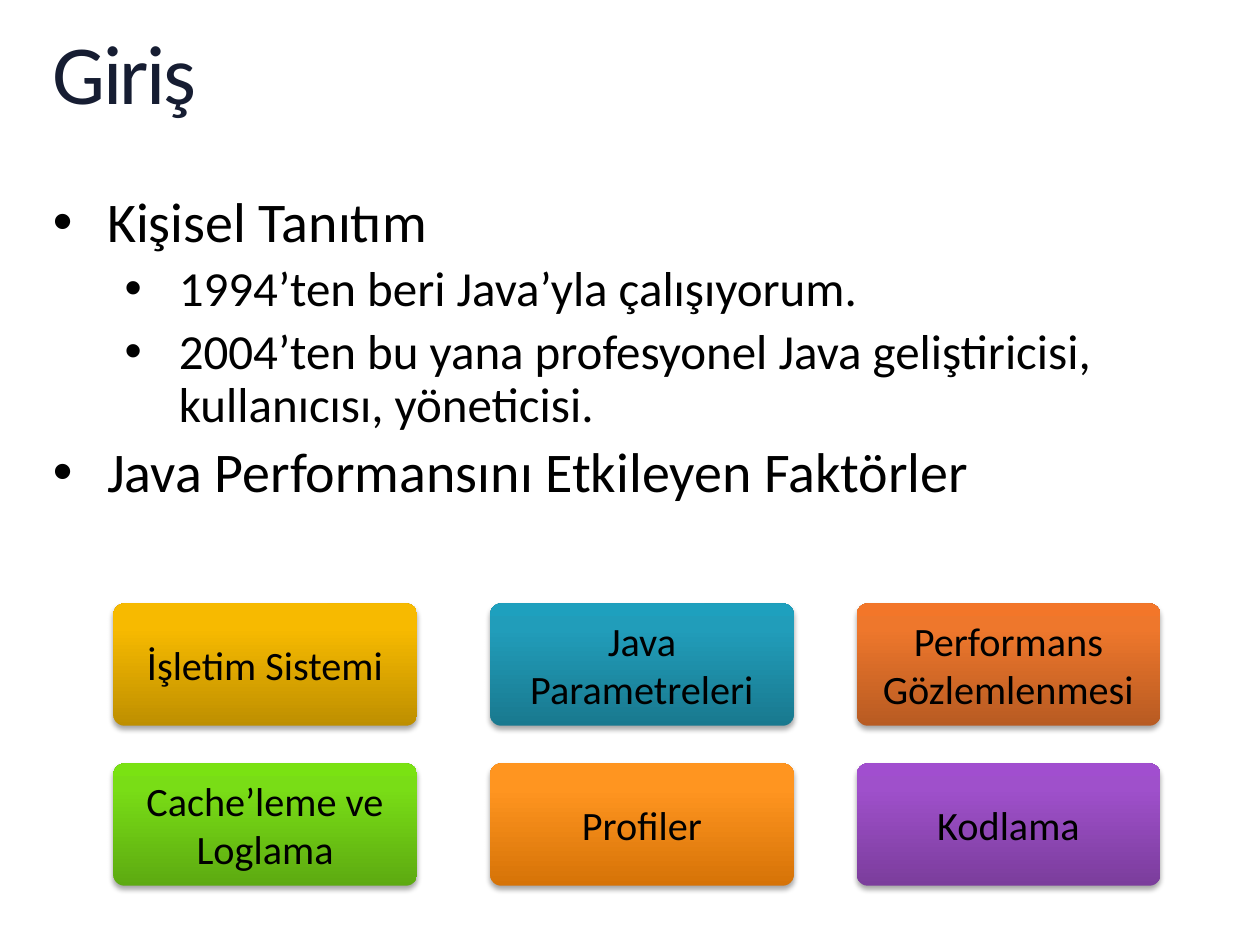
import lxml.etree
import pptx
import pptx.dml.color
import pptx.enum.shapes
import pptx.enum.text
import pptx.oxml.ns
import pptx.util
from pptx.util import Inches

COLOURS = {
    "text": "000000",
    "title": [(0, "2E59B0"), (49, "161D32"), (100, "000000")],
    "gold": [(0, "BE8F00"), (80, "F7BA00"), (100, "F8BB00")],
    "teal": [(0, "19798F"), (80, "219DBA"), (100, "1EA0BE")],
    "rust": [(0, "B85B22"), (80, "EE772C"), (100, "F37629")],
    "green": [(0, "5DAA11"), (80, "79DD16"), (100, "7AE212")],
    "orange": [(0, "D67307"), (80, "FF9520"), (100, "FF9521")],
    "purple": [(0, "7B3D9C"), (80, "9F50CB"), (100, "A14ECF")],
}

BULLETS = [
    (0, "Kişisel Tanıtım"),
    (1, "1994’ten beri Java’yla çalışıyorum."),
    (1, "2004’ten bu yana profesyonel Java geliştiricisi, kullanıcısı, yöneticisi."),
    (0, "Java Performansını Etkileyen Faktörler"),
]

FACTOR_COLUMNS = [0.9, 3.89, 6.8]
FACTOR_ROWS = [
    (4.79, [("İşletim Sistemi", "gold"), ("Java Parametreleri", "teal"),
            ("Performans Gözlemlenmesi", "rust")]),
    (6.06, [("Cache’leme ve Loglama", "green"), ("Profiler", "orange"),
            ("Kodlama", "purple")]),
]


def add_element(parent, tag, **attributes):
    element = lxml.etree.SubElement(parent, pptx.oxml.ns.qn(tag))
    for name, value in attributes.items():
        element.set(name, str(value))
    return element


class SlideBuilder:
    font_name = "Calibri"
    bullet_sizes = [32, 28]
    bullet_margins = [0.43, 1]
    bullet_hanging = 0.43
    line_spacing = 0.9

    def __init__(self, presentation):
        self.slide = presentation.slides.add_slide(presentation.slide_layouts[5])

    def format_run(self, run, size):
        run.font.name = self.font_name
        run.font.size = pptx.util.Pt(size)
        run.font.color.rgb = pptx.dml.color.RGBColor.from_string(COLOURS["text"])

    def apply_gradient(self, fill, properties, stops, degrees):
        fill.gradient()
        gradient = properties.find(pptx.oxml.ns.qn("a:gradFill"))
        stop_list = gradient.find(pptx.oxml.ns.qn("a:gsLst"))
        for stop in list(stop_list):
            stop_list.remove(stop)
        for position, colour in stops:
            stop = add_element(stop_list, "a:gs", pos=position * 1000)
            add_element(stop, "a:srgbClr", val=colour)
        gradient.find(pptx.oxml.ns.qn("a:lin")).set("ang", str(degrees * 60000))

    def prepare_frame(self, text_frame):
        text_frame.word_wrap = True
        text_frame.auto_size = pptx.enum.text.MSO_AUTO_SIZE.NONE
        text_frame.vertical_anchor = pptx.enum.text.MSO_ANCHOR.TOP
        text_frame.margin_left = text_frame.margin_right = 0
        text_frame.margin_top = text_frame.margin_bottom = 0

    def add_title(self, text, left, top, width, height):
        title = self.slide.shapes.title
        title.left, title.top = Inches(left), Inches(top)
        title.width, title.height = Inches(width), Inches(height)
        self.prepare_frame(title.text_frame)
        title.text_frame.text = text
        paragraph = title.text_frame.paragraphs[0]
        paragraph.alignment = pptx.enum.text.PP_ALIGN.LEFT
        paragraph.line_spacing = self.line_spacing
        run = paragraph.runs[0]
        self.format_run(run, 48)
        properties = run.font._element
        properties.set("spc", "-150")
        self.apply_gradient(run.font.fill, properties, COLOURS["title"], 90)

    def add_bullets(self, items, left, top, width, height):
        box = self.slide.shapes.add_textbox(
            Inches(left), Inches(top), Inches(width), Inches(height))
        self.prepare_frame(box.text_frame)
        for index, (level, text) in enumerate(items):
            paragraph = (box.text_frame.add_paragraph() if index
                         else box.text_frame.paragraphs[0])
            paragraph.text = text
            paragraph.level = level
            properties = paragraph._p.get_or_add_pPr()
            properties.set("marL", str(Inches(self.bullet_margins[level])))
            properties.set("indent", str(-Inches(self.bullet_hanging)))
            add_element(properties, "a:buFont", typeface="Arial")
            add_element(properties, "a:buChar", char="•")
            size = self.bullet_sizes[level]
            paragraph.line_spacing = self.line_spacing
            paragraph.space_before = pptx.util.Pt(0.2 * size if index else 0)
            self.format_run(paragraph.runs[0], size)

    def add_factor(self, text, colour, left, top, width, height):
        shape = self.slide.shapes.add_shape(
            pptx.enum.shapes.MSO_SHAPE.ROUNDED_RECTANGLE,
            Inches(left), Inches(top), Inches(width), Inches(height))
        shape.adjustments[0] = 0.09
        properties = shape._element.spPr
        self.apply_gradient(shape.fill, properties, COLOURS[colour], 270)
        shape.line.fill.background()
        self.add_shadow(shape)
        shape.text_frame.word_wrap = True
        shape.text_frame.vertical_anchor = pptx.enum.text.MSO_ANCHOR.MIDDLE
        shape.text_frame.text = text
        paragraph = shape.text_frame.paragraphs[0]
        paragraph.alignment = pptx.enum.text.PP_ALIGN.CENTER
        self.format_run(paragraph.runs[0], 23)

    def add_shadow(self, shape):
        shape.shadow.inherit = False
        effects = shape._element.spPr.find(pptx.oxml.ns.qn("a:effectLst"))
        shadow = add_element(
            effects, "a:outerShdw", blurRad=pptx.util.Pt(3.1),
            dist=pptx.util.Pt(1.8), dir=90 * 60000, rotWithShape=0)
        colour = add_element(shadow, "a:srgbClr", val=COLOURS["text"])
        add_element(colour, "a:alpha", val=35000)


def main():
    presentation = pptx.Presentation()
    presentation.slide_width = Inches(10)
    presentation.slide_height = Inches(7.5)
    builder = SlideBuilder(presentation)
    builder.add_title("Giriş", 0.42, 0.25, 9.17, 0.73)
    builder.add_bullets(BULLETS, 0.42, 1.54, 9.17, 2.54)
    for top, factors in FACTOR_ROWS:
        for left, (text, colour) in zip(FACTOR_COLUMNS, factors):
            builder.add_factor(text, colour, left, top, 2.41, 0.97)
    presentation.save("out.pptx")


if __name__ == "__main__":
    main()
